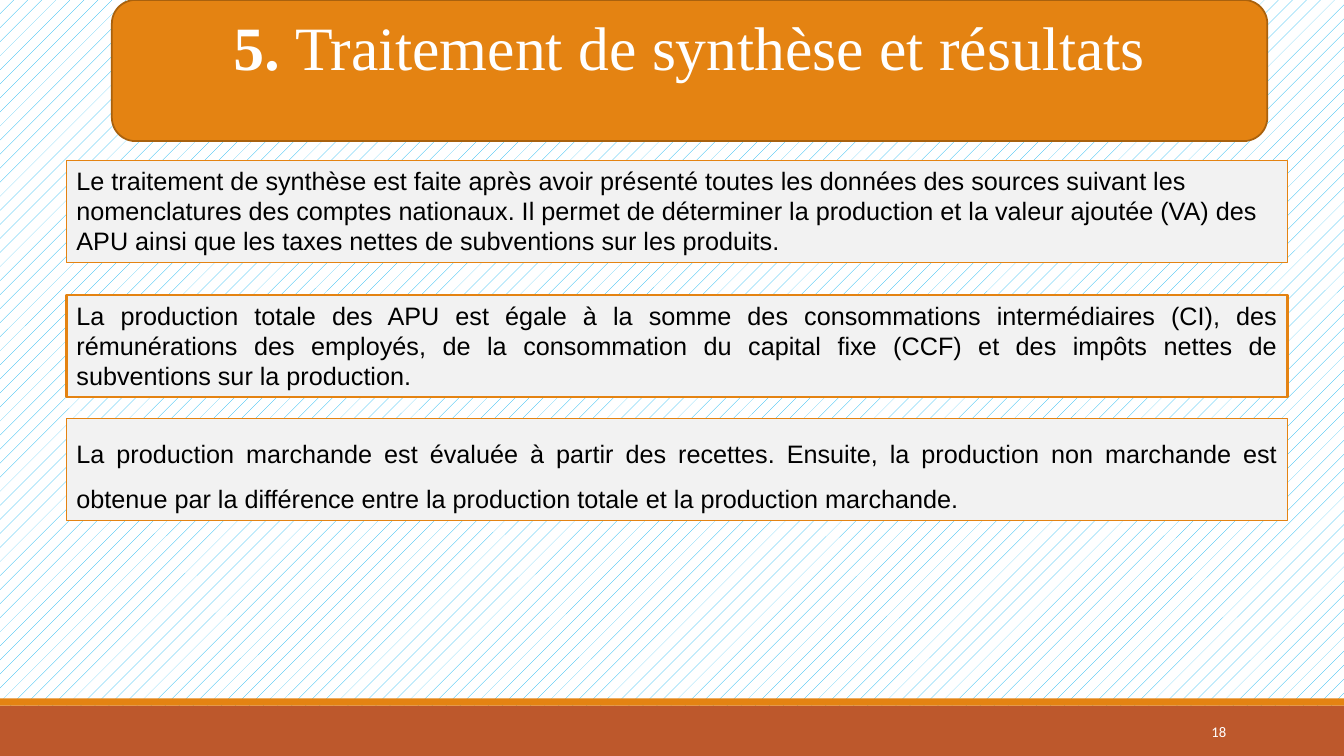
import pptx
import pptx.dml.color
import pptx.enum.dml
import pptx.enum.shapes
import pptx.enum.text
import pptx.util

Inches = pptx.util.Inches
Pt = pptx.util.Pt
ALIGN = pptx.enum.text.PP_ALIGN
ANCHOR = pptx.enum.text.MSO_ANCHOR
PRESET = pptx.enum.shapes.MSO_SHAPE

COLORS = {
    "orange": "E48312",
    "rust": "BD582C",
    "brown": "A9610D",
    "panel": "F2F2F2",
    "text": "000000",
    "white": "FFFFFF",
    "hatch": "00B0F0",
}


def rgb(key):
    return pptx.dml.color.RGBColor.from_string(COLORS[key])


class SlideBuilder:
    """Draws the styled elements of one slide."""

    def __init__(self, slide):
        self.slide = slide

    def background(self):
        fill = self.slide.background.fill
        fill.patterned()
        fill.pattern = pptx.enum.dml.MSO_PATTERN.PERCENT_5
        fill.fore_color.rgb = rgb("hatch")
        fill.back_color.rgb = rgb("white")

    def block(self, preset, box, fill, line=None, width=0):
        block = self.slide.shapes.add_shape(preset, *map(Inches, box))
        block.shadow.inherit = False
        block.fill.solid()
        block.fill.fore_color.rgb = rgb(fill)
        if line:
            block.line.color.rgb = rgb(line)
            block.line.width = Pt(width)
        else:
            block.line.fill.background()
        return block

    def style(self, paragraph, font, size, color, align):
        paragraph.alignment = align
        paragraph.font.name = font
        paragraph.font.size = Pt(size)
        paragraph.font.color.rgb = rgb(color)

    def title(self, box, number, wording):
        title = self.slide.shapes.title
        title.left, title.top, title.width, title.height = map(Inches, box)
        title.text_frame.vertical_anchor = ANCHOR.MIDDLE
        heading = title.text_frame.paragraphs[0]
        self.style(heading, "Times New Roman", 44, "white", ALIGN.CENTER)
        for text, bold in ((number, True), (wording, False)):
            run = heading.add_run()
            run.text = text
            run.font.bold = bold

    def panel(self, top, text, align, width, spacing):
        panel = self.block(PRESET.RECTANGLE, (0.66, top, 12.11, 1.01), "panel", "orange", width)
        frame = panel.text_frame
        frame.word_wrap = True
        frame.vertical_anchor = ANCHOR.TOP
        frame.text = text
        self.style(frame.paragraphs[0], "Arial", 18, "text", align)
        frame.paragraphs[0].line_spacing = spacing

    def page_number(self, box, number):
        page = self.slide.shapes.add_textbox(*map(Inches, box))
        page.text_frame.word_wrap = True
        page.text_frame.vertical_anchor = ANCHOR.MIDDLE
        page.text_frame.text = number
        self.style(page.text_frame.paragraphs[0], "Calibri", 10.5, "white", ALIGN.RIGHT)


PANELS = [
    (1.59, "Le traitement de synthèse est faite après avoir présenté toutes les données des sources "
           "suivant les nomenclatures des comptes nationaux. Il permet de déterminer la production et "
           "la valeur ajoutée (VA) des APU ainsi que les taxes nettes de subventions sur les produits.",
     ALIGN.LEFT, 0.75, 1.0),
    (2.93, "La production totale des APU est égale à la somme des consommations intermédiaires (CI), "
           "des rémunérations des employés, de la consommation du capital fixe (CCF) et des impôts "
           "nettes de subventions sur la production.",
     ALIGN.JUSTIFY, 1.5, 1.0),
    (4.15, "La production marchande est évaluée à partir des recettes. Ensuite, la production non "
           "marchande est obtenue par la différence entre la production totale et la production "
           "marchande.",
     ALIGN.JUSTIFY, 0.75, 1.5),
]


def main():
    deck = pptx.Presentation()
    deck.slide_width, deck.slide_height = Inches(13.33), Inches(7.5)
    builder = SlideBuilder(deck.slides.add_slide(deck.slide_layouts[5]))
    builder.background()
    builder.block(PRESET.RECTANGLE, (0, 7, 13.33, 0.5), "rust")
    builder.block(PRESET.RECTANGLE, (0, 6.93, 13.33, 0.07), "orange")
    banner = builder.block(PRESET.ROUNDED_RECTANGLE, (1.11, 0, 11.46, 1.4), "orange", "brown", 1.25)
    heading = builder.slide.shapes.title
    banner.element.addnext(heading.element)
    builder.title((1.11, 0, 11.46, 0.9), "5. ", "Traitement de synthèse et résultats")
    for panel in PANELS:
        builder.panel(*panel)
    builder.page_number((10.83, 7.06, 1.43, 0.4), "18")
    deck.save("out.pptx")


if __name__ == "__main__":
    main()
